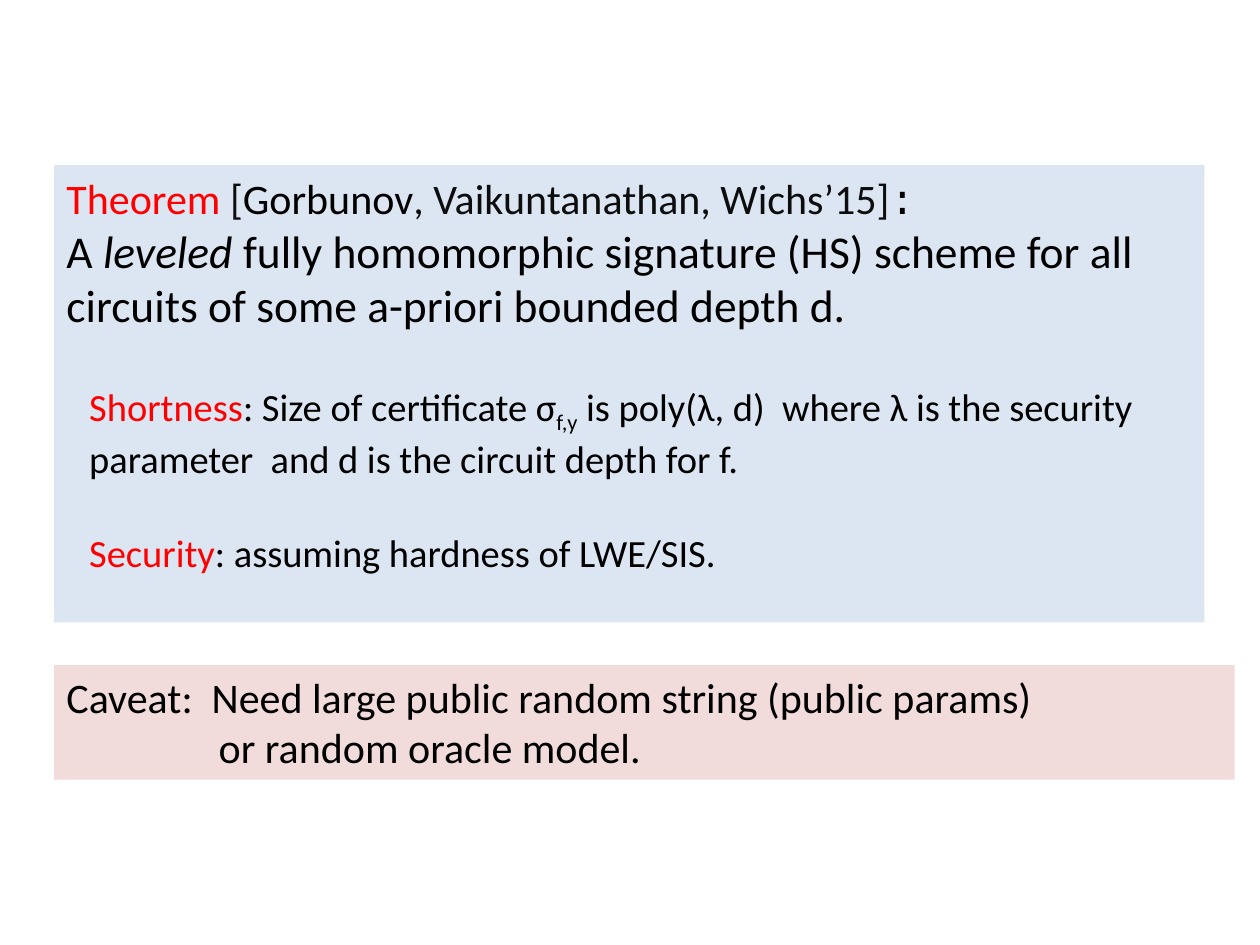
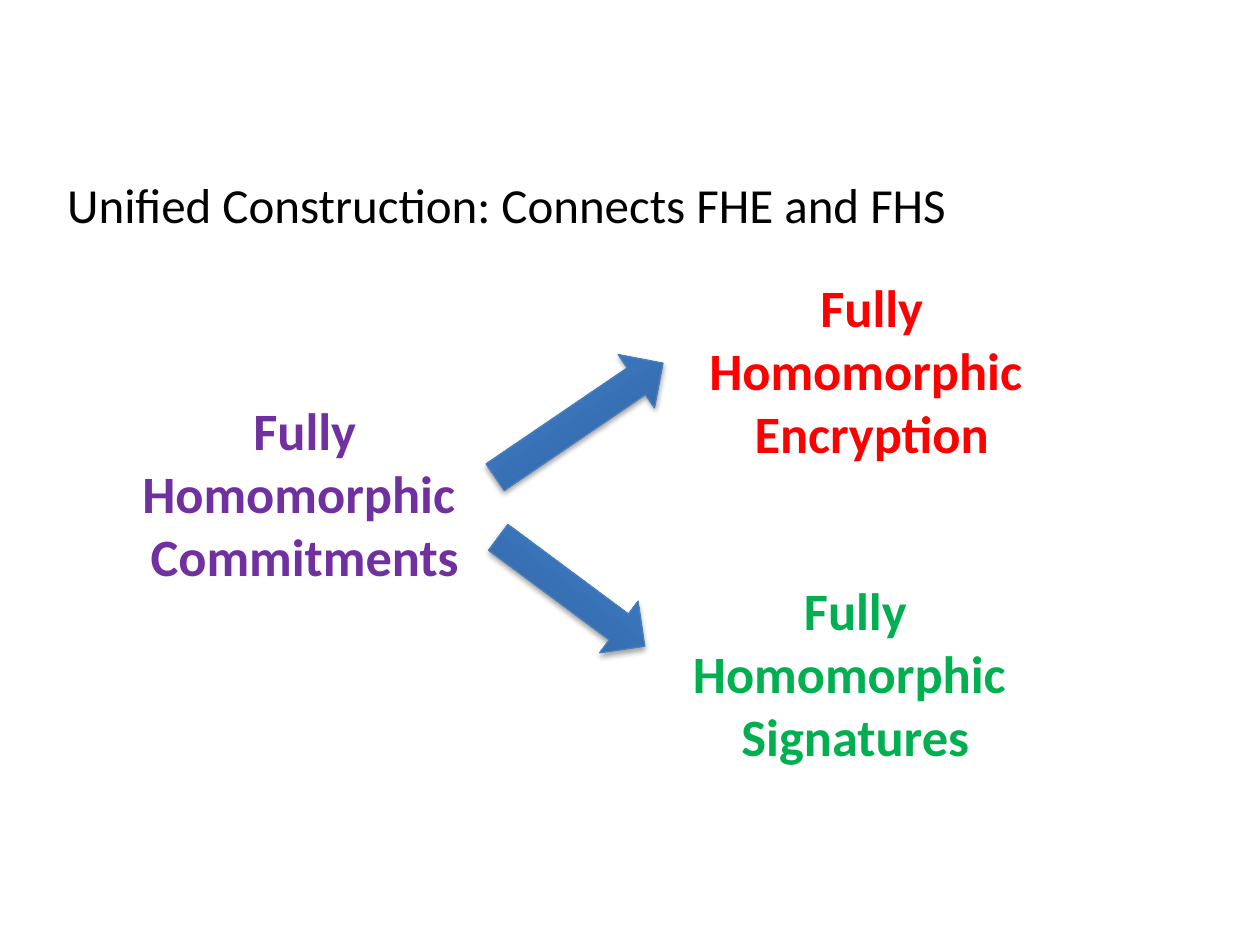
"""Build two slides on fully homomorphic signatures and commitments."""
from dataclasses import dataclass

from pptx import Presentation
from pptx import oxml
from pptx import util as u
from pptx.dml.color import RGBColor
from pptx.enum import shapes, text
from pptx.oxml import ns


@dataclass(frozen=True)
class Theme:
    font: str = "Calibri"
    mono: str = "Courier New"
    black: str = "000000"
    ink: str = "0D0D0D"
    red: str = "FF0000"
    green: str = "00B050"
    purple: str = "7030A0"
    white: str = "FFFFFF"
    blue_panel: str = "DCE6F2"
    pink_panel: str = "F2DCDB"
    arrow_line: str = "4B7EBC"
    arrow_stops: tuple = ((0, "2F5F99"), (80, "3D7CC7"), (100, "3A7CCB"))
    title: int = 28
    concept: int = 30
    claim: int = 26
    body: int = 24
    detail: int = 22


T = Theme()
RED = {"color": T.red}
INK = {"color": T.ink}

THEOREM = [
    (T.body, [("Theorem ", RED), ("[", INK), ("Gorbunov", {}),
              (", Vaikuntanathan, Wichs’15]", INK), (":", {"font": T.mono})]),
    (T.claim, [("A ", {}), ("leveled", {"italic": True}),
               (" fully homomorphic signature (HS) scheme for all circuits"
                " of some a-priori bounded depth d.", {})]),
]
SHORTNESS = [
    (T.detail, [("Shortness", RED), (": Size of certificate σ", {}), ("f,y", {"sub": True}),
                (" is poly(λ, d)  where λ is the security parameter"
                 "  and d is the circuit depth for f.", {})]),
]
SECURITY = [
    (T.detail, [("Security", RED), (": assuming hardness of LWE/SIS.", {})]),
]
CAVEAT = [
    (T.body, [("Caveat:  Need large public random string (public params)", {})]),
    (T.body, [("or random oracle model.", {})]),
]
CAVEAT_INDENT = 3.07

PANEL = (1.09, 3.33, 23.19, 9.22)
STATEMENTS = [
    (THEOREM, (1.09, 3.35, 23.39, 5.56)),
    (SHORTNESS, (1.55, 7.59, 22.4, 2.13)),
    (SECURITY, (1.55, 10.54, 22.6, 1.19)),
]
CAVEAT_BOX = (1.09, 13.41, 23.8, 2.31)

TITLE = [(T.title, [("Unified Construction: Connects FHE and FHS", {})])]
TITLE_BOX = (0.33, 2.82, 19.76, 1.96)
CONCEPT_SIZE = (7.11, 4.11)
CONCEPTS = [
    ("Encryption", T.red, (14.02, 5.41)),
    ("Signatures", T.green, (13.69, 11.53)),
    ("Commitments", T.purple, (2.59, 7.9)),
]
ARROWS = [
    ((9.63, 7.82, 4.09, 1.3), 325.8),
    ((9.68, 11.28, 3.68, 1.3), 36.6),
]


def cm(box):
    return [u.Cm(v) for v in box]


def rgb(code):
    return RGBColor.from_string(code)


def paint(s, color):
    s.fill.solid()
    s.fill.fore_color.rgb = rgb(color)


def add_run(p, words, color=None, font=None, italic=None, sub=False):
    r = p.add_run()
    r.text = words
    r.font.italic = italic
    if color:
        r.font.color.rgb = rgb(color)
    if font:
        r.font.name = font
    if sub:
        r.font._element.set("baseline", "-25000")


def add_text(slide, box, paragraphs, color=T.black, bold=None, align=None, wrap=True):
    s = slide.shapes.add_textbox(*cm(box))
    tf = s.text_frame
    tf.word_wrap = wrap
    for i, (size, runs) in enumerate(paragraphs):
        p = tf.add_paragraph() if i else tf.paragraphs[0]
        p.alignment = align
        p.font.name, p.font.size, p.font.bold = T.font, u.Pt(size), bold
        p.font.color.rgb = rgb(color)
        for words, style in runs:
            add_run(p, words, **style)
    return s


def add_arrow(slide, box, angle):
    s = slide.shapes.add_shape(shapes.MSO_SHAPE.RIGHT_ARROW, *cm(box))
    s.rotation = angle
    s.line.color.rgb = rgb(T.arrow_line)
    s.line.width = u.Pt(0.75)
    s.shadow.inherit = False
    stops = "".join(f'<a:gs pos="{pos * 1000}"><a:srgbClr val="{c}"/></a:gs>'
                    for pos, c in T.arrow_stops)
    spPr = s._element.spPr
    spPr.find(ns.qn("a:ln")).addprevious(oxml.parse_xml(
        f'<a:gradFill {ns.nsdecls("a")} rotWithShape="1"><a:gsLst>{stops}</a:gsLst>'
        '<a:lin ang="16200000" scaled="0"/></a:gradFill>'))
    spPr.find(ns.qn("a:effectLst")).append(oxml.parse_xml(
        f'<a:outerShdw {ns.nsdecls("a")} blurRad="40000" dist="23000" dir="5400000"'
        f' rotWithShape="0"><a:srgbClr val="{T.black}"><a:alpha val="35000"/>'
        '</a:srgbClr></a:outerShdw>'))


def build_theorem(slide):
    s = slide.shapes.add_shape(shapes.MSO_SHAPE.RECTANGLE, *cm(PANEL))
    s.shadow.inherit = False
    s.line.fill.background()
    paint(s, T.blue_panel)
    for paragraphs, box in STATEMENTS:
        add_text(slide, box, paragraphs)
    s = add_text(slide, CAVEAT_BOX, CAVEAT)
    paint(s, T.pink_panel)
    pPr = s.text_frame.paragraphs[1]._p.get_or_add_pPr()
    pPr.set("marL", str(u.Cm(CAVEAT_INDENT)))


def build_connection(slide):
    for box, angle in ARROWS:
        add_arrow(slide, box, angle)
    for goal, color, corner in CONCEPTS:
        lines = [(T.concept, [(words, {})]) for words in ("Fully", "Homomorphic ", goal)]
        add_text(slide, corner + CONCEPT_SIZE, lines, color, bold=True,
                 align=text.PP_ALIGN.CENTER, wrap=False)
    s = add_text(slide, TITLE_BOX, TITLE, align=text.PP_ALIGN.CENTER)
    tf = s.text_frame
    tf.vertical_anchor = text.MSO_ANCHOR.BOTTOM
    tf.margin_left = tf.margin_right = u.Cm(0.18)
    tf.margin_top = tf.margin_bottom = u.Cm(0.1)
    tf.paragraphs[0].line_spacing = 0.7


def main():
    prs = Presentation()
    prs.slide_width, prs.slide_height = u.Cm(25.4), u.Cm(19.05)
    for build in (build_theorem, build_connection):
        build(prs.slides.add_slide(prs.slide_layouts[6]))
    prs.save("out.pptx")


if __name__ == "__main__":
    main()
